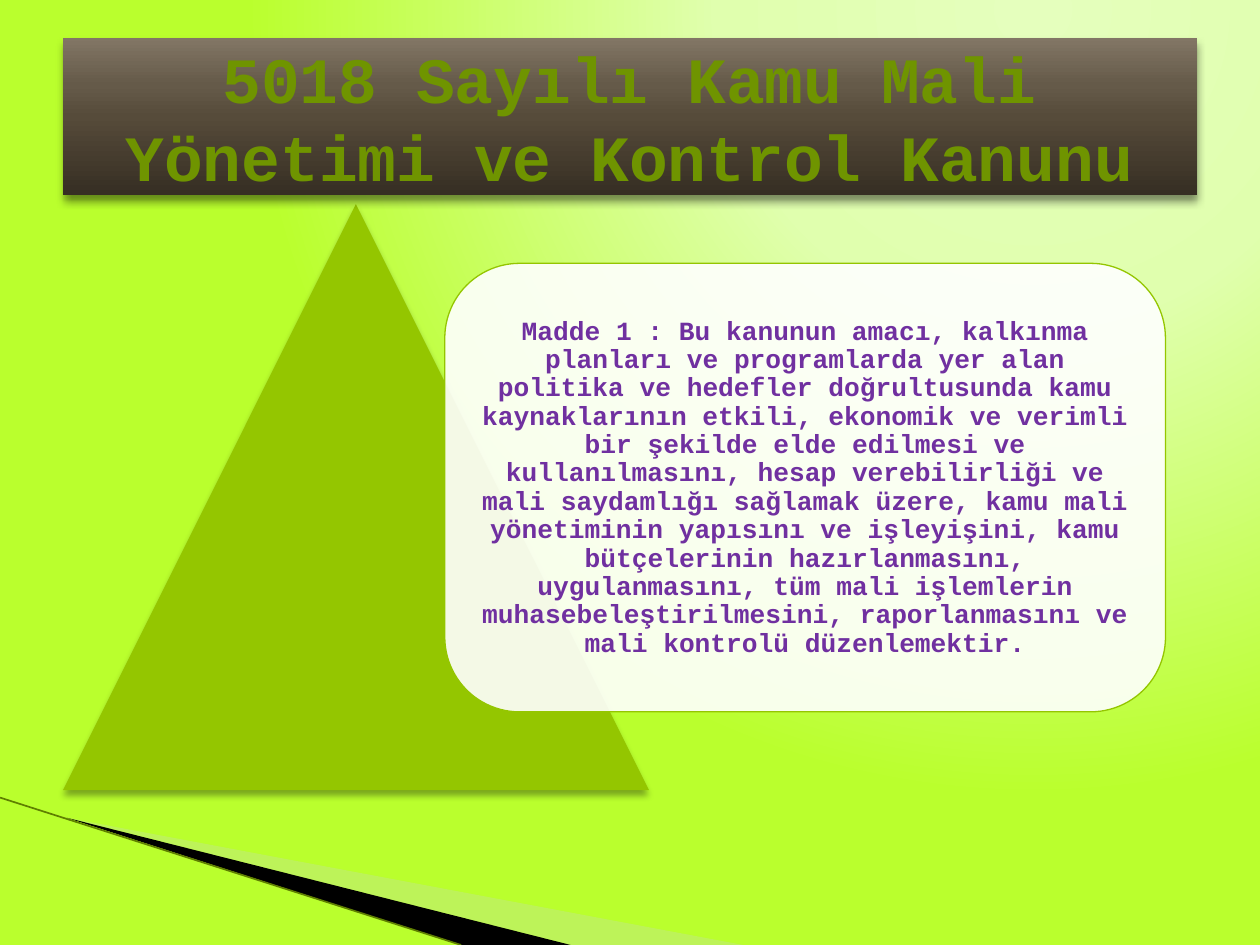
from lxml.etree import SubElement
from pptx import Presentation
from pptx.dml.color import RGBColor
from pptx.enum.shapes import MSO_CONNECTOR, MSO_SHAPE
from pptx.enum.text import MSO_ANCHOR, MSO_AUTO_SIZE, PP_ALIGN
from pptx.oxml.ns import qn
from pptx.util import Inches, Pt

LIME = RGBColor(0xBA, 0xFF, 0x2D)
PALE_LIME = RGBColor(0xE0, 0xFF, 0xAE)
LIGHT_LIME = RGBColor(0xE5, 0xFF, 0xBD)
SAGE = RGBColor(0xC3, 0xE1, 0x9D)
OLIVE = RGBColor(0x5F, 0x7F, 0x00)
GREEN = RGBColor(0x94, 0xC6, 0x00)
TITLE_GREEN = RGBColor(0x6F, 0x94, 0x00)
PURPLE = RGBColor(0x70, 0x30, 0xA0)
BLACK = RGBColor(0, 0, 0)
WHITE = RGBColor(0xFF, 0xFF, 0xFF)
BROWN_STOPS = [
    (0, RGBColor(0x36, 0x2E, 0x23)),
    (50, RGBColor(0x56, 0x4B, 0x3A)),
    (70, RGBColor(0x65, 0x5A, 0x49)),
    (100, RGBColor(0x82, 0x76, 0x65)),
]
LIME_STOPS = [(0, LIGHT_LIME), (40, PALE_LIME), (100, LIME)]
FONT = "Courier New"
TITLE = "5018 Sayılı Kamu Mali Yönetimi ve Kontrol Kanunu"
ARTICLE = (
    "Madde 1 : Bu kanunun amacı, kalkınma planları ve programlarda yer alan "
    "politika ve hedefler doğrultusunda kamu kaynaklarının etkili, ekonomik ve "
    "verimli bir şekilde elde edilmesi ve kullanılmasını, hesap verebilirliği ve "
    "mali saydamlığı sağlamak üzere, kamu mali yönetiminin yapısını ve "
    "işleyişini, kamu bütçelerinin hazırlanmasını, uygulanmasını, tüm mali "
    "işlemlerin muhasebeleştirilmesini, raporlanmasını ve mali kontrolü "
    "düzenlemektir."
)


def add_node(parent, tag, **attributes):
    """Append a DrawingML element with the given attributes."""
    node = SubElement(parent, qn(tag))
    for name, value in attributes.items():
        node.set(name, str(value))
    return node


def add_gradient(parent, stops):
    """Append a gradient fill with its colour stops."""
    gradient = add_node(parent, "a:gradFill", rotWithShape=1)
    stop_list = add_node(gradient, "a:gsLst")
    for position, color in stops:
        stop = add_node(stop_list, "a:gs", pos=position * 1000)
        add_node(stop, "a:srgbClr", val=color)
    return gradient


def add_shadow(shape, opacity, blur, distance):
    """Give a shape a soft black shadow straight below it."""
    shape.shadow.inherit = False
    effects = shape.element.spPr.find(qn("a:effectLst"))
    shadow = add_node(effects, "a:outerShdw", blurRad=Pt(blur), dist=Pt(distance),
                      dir=90 * 60000, algn="ctr", rotWithShape=0)
    color = add_node(shadow, "a:srgbClr", val=BLACK)
    add_node(color, "a:alpha", val=opacity * 1000)


def fill_plain(shape, color, opacity=100):
    """Fill a shape with one colour and remove its line and shadow."""
    shape.fill.solid()
    shape.fill.fore_color.rgb = color
    if opacity < 100:
        add_node(shape.element.spPr.find(".//" + qn("a:srgbClr")), "a:alpha",
                 val=opacity * 1000)
    shape.line.fill.background()
    shape.shadow.inherit = False


def format_text(frame, text, size, color):
    """Write one bold centred paragraph in the middle of a text frame."""
    frame.word_wrap = True
    frame.auto_size = MSO_AUTO_SIZE.NONE
    frame.vertical_anchor = MSO_ANCHOR.MIDDLE
    paragraph = frame.paragraphs[0]
    paragraph.text = text
    paragraph.alignment = PP_ALIGN.CENTER
    paragraph.font.name = FONT
    paragraph.font.size = Pt(size)
    paragraph.font.bold = True
    paragraph.font.color.rgb = color
    return paragraph


def paint_background(page):
    """Paint the radial lime background."""
    page.background.fill.solid()
    properties = page.element.find(".//" + qn("p:bgPr"))
    properties.remove(properties.find(qn("a:solidFill")))
    gradient = add_gradient(properties, LIME_STOPS)
    properties.insert(0, gradient)
    circle = add_node(gradient, "a:path", path="circle")
    add_node(circle, "a:fillToRect", l=65000, b=98000)


def add_corner(page, left, top, bottom):
    """Draw the wedges and the line that run from the left to the bottom edge."""
    wedges = [
        ([(left, top), (5.9, bottom), (4.53, bottom)], SAGE, 40),
        ([(left, top), (4.53, bottom), (3.66, bottom)], BLACK, 100),
    ]
    for points, color, opacity in wedges:
        corners = [(Inches(x), Inches(y)) for x, y in points]
        builder = page.shapes.build_freeform(*corners[0])
        builder.add_line_segments(corners[1:], close=True)
        fill_plain(builder.convert_to_shape(), color, opacity)
    edge = page.shapes.add_connector(MSO_CONNECTOR.STRAIGHT, 0, Inches(6.33),
                                     Inches(3.66), Inches(bottom))
    edge.line.color.rgb = OLIVE
    edge.line.width = Pt(0.95)
    add_node(edge.element.spPr, "a:effectLst")


def add_pyramid(page, left, top, size):
    """Draw the triangle with the article card over its right half."""
    shapes = page.shapes.add_group_shape().shapes
    triangle = shapes.add_shape(MSO_SHAPE.ISOSCELES_TRIANGLE, Inches(left),
                                Inches(top), Inches(size), Inches(size))
    fill_plain(triangle, GREEN)
    add_shadow(triangle, 35, 4, 3)

    card_left, card_top, width, height = left + 3.03, top + 0.47, 5.72, 3.56
    card = shapes.add_shape(MSO_SHAPE.ROUNDED_RECTANGLE, Inches(card_left),
                            Inches(card_top), Inches(width), Inches(height))
    fill_plain(card, WHITE, 90)
    card.line.color.rgb = GREEN
    card.line.width = Pt(0.75)

    inset = 0.17
    box = shapes.add_textbox(Inches(card_left + inset), Inches(card_top + inset),
                             Inches(width - 2 * inset), Inches(height - 2 * inset))
    frame = box.text_frame
    frame.margin_left = frame.margin_right = Inches(0.08)
    frame.margin_top = frame.margin_bottom = Inches(0.06)
    format_text(frame, ARTICLE, 15, PURPLE).line_spacing = 0.9


def add_title(page, left, top, width, height):
    """Place the title on its brown band in front of the other shapes."""
    title = page.shapes.title
    title.left, title.top = Inches(left), Inches(top)
    title.width, title.height = Inches(width), Inches(height)
    gradient = add_gradient(title.element.spPr, BROWN_STOPS)
    add_node(gradient, "a:lin", ang=270 * 60000, scaled=0)
    add_shadow(title, 45, 5, 3)
    format_text(title.text_frame, TITLE, 36.9, TITLE_GREEN)
    title.element.getparent().append(title.element)


def main():
    """Build the slide and save the deck."""
    deck = Presentation()
    deck.slide_width, deck.slide_height = Inches(10), Inches(7.5)
    page = deck.slides.add_slide(deck.slide_layouts[5])
    paint_background(page)
    add_corner(page, 0.53, 6.49, 7.5)
    add_pyramid(page, 0.5, 1.62, 4.65)
    add_title(page, 0.5, 0.3, 9, 1.25)
    deck.save("out.pptx")


if __name__ == "__main__":
    main()
